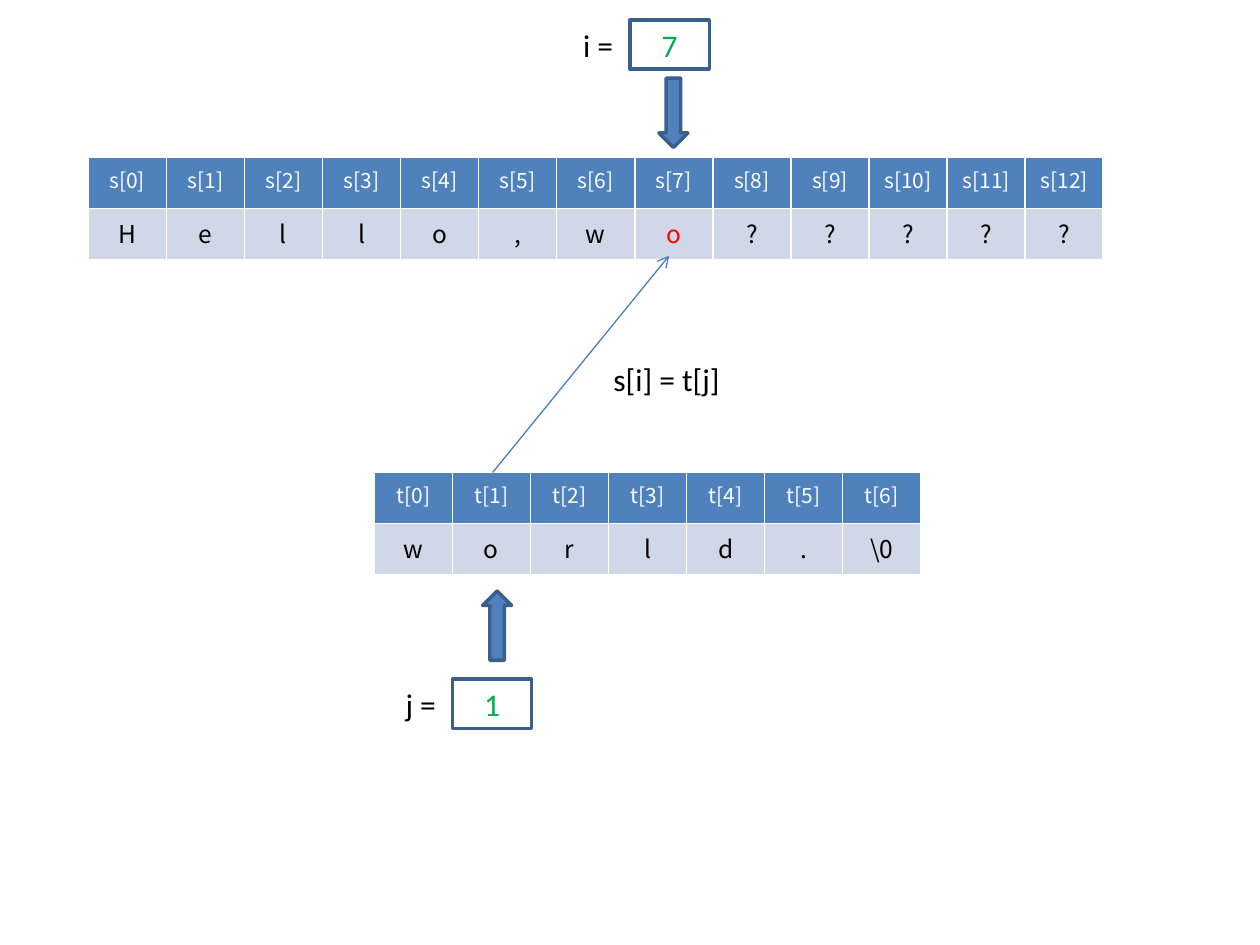
from lxml import etree
from pptx import Presentation
from pptx.dml.color import RGBColor
from pptx.enum.shapes import MSO_CONNECTOR, MSO_SHAPE
from pptx.enum.text import MSO_ANCHOR, MSO_AUTO_SIZE, PP_ALIGN
from pptx.oxml import parse_xml
from pptx.oxml.ns import nsdecls, qn
from pptx.util import Inches, Pt

RECT = MSO_SHAPE.RECTANGLE
DOWN = MSO_SHAPE.DOWN_ARROW
LINE = MSO_CONNECTOR.STRAIGHT
CENTER = PP_ALIGN.CENTER
MIDDLE = MSO_ANCHOR.MIDDLE
GROW = MSO_AUTO_SIZE.SHAPE_TO_FIT_TEXT

COLORS = {
    "head": "4F81BD",
    "cell": "D0D8E8",
    "edge": "3A5F8C",
    "link": "4B7EBC",
    "white": "FFFFFF",
    "black": "000000",
    "green": "00B050",
    "red": "FF0000",
}


def color(name):
    return RGBColor.from_string(COLORS[name])


class Board:
    body = "Calibri"
    mono = "Noto Sans CJK JP"
    cell_w = 0.62
    table_h = 0.81

    def __init__(self, slide):
        self.slide = slide

    def text(self, para, words, size, font, tint):
        run = para.add_run()
        run.text = words
        run.font.size = Pt(size)
        run.font.name = font
        run.font.bold = False
        run.font.color.rgb = color(tint)

    def shape(self, kind, left, top, width, height, fill):
        item = self.slide.shapes.add_shape(
            kind, Inches(left), Inches(top), Inches(width), Inches(height))
        item.shadow.inherit = False
        item.fill.solid()
        item.fill.fore_color.rgb = color(fill)
        item.line.color.rgb = color("edge")
        item.line.width = Pt(2)
        return item

    def value(self, left, top, words):
        box = self.shape(RECT, left, top, 0.63, 0.39, "white")
        frame = box.text_frame
        frame.vertical_anchor = MIDDLE
        para = frame.paragraphs[0]
        para.alignment = CENTER
        self.text(para, words, 18, self.body, "green")

    def arrow(self, left, top, turn=0):
        self.shape(DOWN, left, top, 0.23, 0.55, "head").rotation = turn

    def label(self, left, top, width, words):
        box = self.slide.shapes.add_textbox(
            Inches(left), Inches(top), Inches(width), Inches(0.4))
        frame = box.text_frame
        frame.word_wrap = False
        frame.auto_size = GROW
        self.text(frame.paragraphs[0], words, 18, self.body, "black")

    def link(self, start, end):
        line = self.slide.shapes.add_connector(
            LINE, *(Inches(n) for n in start + end))
        line.line.color.rgb = color("link")
        line.line.width = Pt(0.75)
        props = line._element.spPr
        etree.SubElement(props.find(qn("a:ln")), qn("a:tailEnd"), type="arrow")
        etree.SubElement(props, qn("a:effectLst"))

    def border(self, cell):
        props = cell._tc.get_or_add_tcPr()
        for spot, side in enumerate("LRTB"):
            props.insert(spot, parse_xml(
                f'<a:ln{side} {nsdecls("a")} w="{Pt(1)}"><a:solidFill>'
                f'<a:srgbClr val="{COLORS["white"]}"/>'
                f'</a:solidFill></a:ln{side}>'))

    def cell(self, cell, words, size, fill, tint):
        cell.fill.solid()
        cell.fill.fore_color.rgb = color(fill)
        self.border(cell)
        para = cell.text_frame.paragraphs[0]
        para.alignment = CENTER
        self.text(para, words, size, self.mono, tint)

    def array(self, left, top, name, items, hot=None):
        count = len(items)
        table = self.slide.shapes.add_table(
            2, count, Inches(left), Inches(top),
            Inches(self.cell_w * count), Inches(self.table_h)).table
        for col, item in enumerate(items):
            table.columns[col].width = Inches(self.cell_w)
            tint = "red" if col == hot else "black"
            self.cell(table.cell(0, col), f"{name}[{col}]", 12, "head", "white")
            self.cell(table.cell(1, col), item, 14, "cell", tint)


def main():
    deck = Presentation()
    deck.slide_width = Inches(10)
    deck.slide_height = Inches(7.5)
    board = Board(deck.slides.add_slide(deck.slide_layouts[6]))

    board.array(0.7, 1.25, "s", "Hello,wo?????", hot=7)
    board.array(2.97, 3.75, "t", [*"world.", "\\0"])
    board.arrow(5.23, 0.62)
    board.value(5, 0.16, "7")
    board.label(4.53, 0.16, 0.44, "i =")
    board.value(3.59, 5.39, "1")
    board.label(3.12, 5.39, 0.45, "j =")
    board.arrow(3.83, 4.69, turn=180)
    board.label(4.77, 2.81, 1.05, "s[i] = t[j]")
    board.link((3.91, 3.75), (5.31, 2.03))

    deck.save("out.pptx")


if __name__ == "__main__":
    main()
